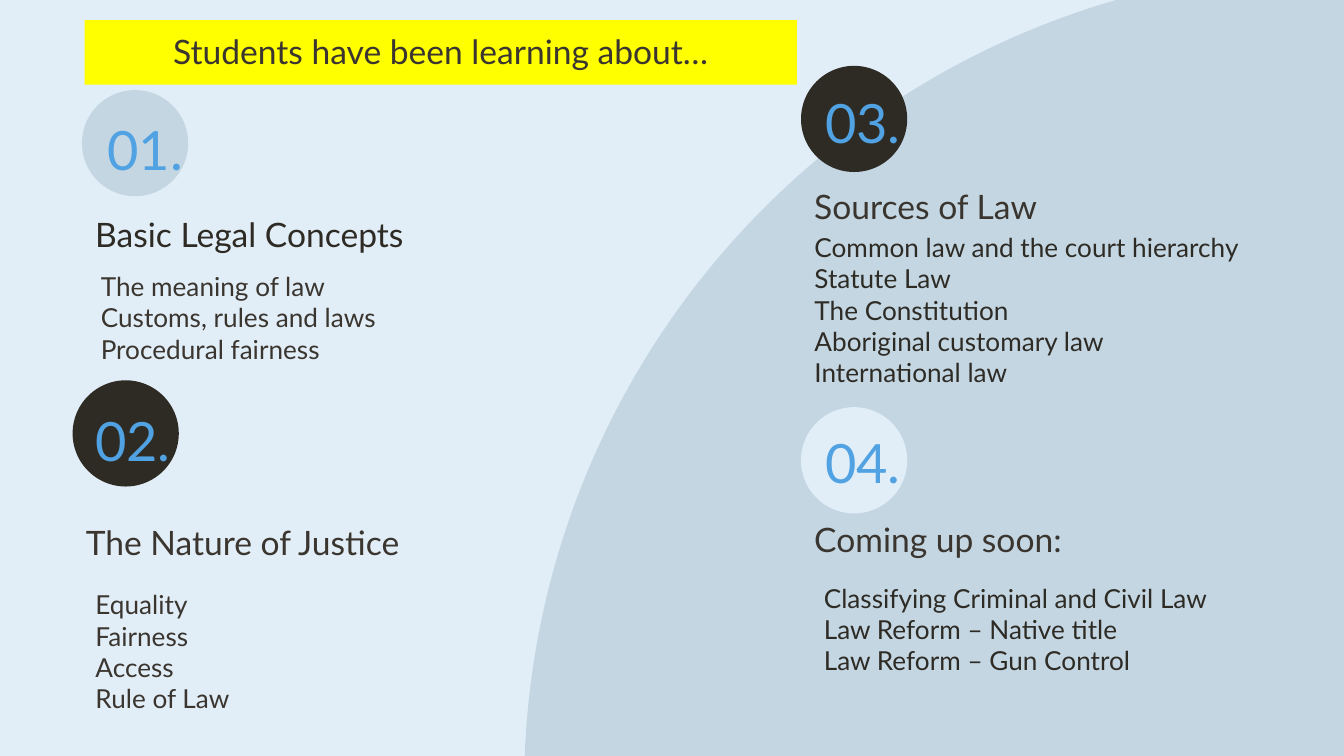
from dataclasses import dataclass

from lxml import etree
from pptx import Presentation
from pptx.dml.color import RGBColor
from pptx.enum.shapes import MSO_SHAPE
from pptx.enum.text import MSO_ANCHOR, MSO_AUTO_SIZE, PP_ALIGN
from pptx.oxml.ns import qn
from pptx.util import Inches, Pt

OVAL, PIE = MSO_SHAPE.OVAL, MSO_SHAPE.PIE
TOP, MIDDLE, BOTTOM = MSO_ANCHOR.TOP, MSO_ANCHOR.MIDDLE, MSO_ANCHOR.BOTTOM
LEFT, CENTER = PP_ALIGN.LEFT, PP_ALIGN.CENTER
NO_FIT = MSO_AUTO_SIZE.NONE

FONT = "Lato"
PALE, MIST, DARK = "E2EEF7", "C3D6E2", "2E2B25"
BROWN, BLUE, YELLOW = "3A352F", "51A2E2", "FFFF00"
COMPARISON_LAYOUT = 4
CIRCLE_SIZE = 0.79
COLUMN_WIDTH = 3.18


@dataclass
class Section:
    left: float
    top: float
    circle_color: str
    number: str
    number_offset: tuple
    heading: str
    heading_color: str
    heading_box: tuple
    items: list
    items_color: str
    items_box: tuple


SECTIONS = [
    Section(0.61, 0.67, MIST, "01.", (0.09, 0.12),
            "Basic Legal Concepts", DARK, (0.41, 0.91),
            ["The meaning of law", "Customs, rules and laws", "Procedural fairness"],
            BROWN, (0.04, 1.24, COLUMN_WIDTH, 0.82)),
    Section(0.54, 2.83, DARK, "02.", (0.07, 0.13),
            "The Nature of Justice", BROWN, (0.76, 0.69),
            ["Equality", "Fairness", "Access", "Rule of Law"],
            BROWN, (0.07, 1.45, COLUMN_WIDTH, 1.08)),
    Section(5.96, 0.49, DARK, "03.", (0.08, 0.1),
            "Sources of Law", BROWN, (0.38, 0.91),
            ["Common law and the court hierarchy", "Statute Law", "The Constitution",
             "Aboriginal customary law", "International law"],
            DARK, (0, 1.13, 3.86, 1.29)),
    Section(5.96, 3.03, PALE, "04.", (0.08, 0.09),
            "Coming up soon:", BROWN, (0.32, 0.91),
            ["Classifying Criminal and Civil Law", "Law Reform – Native title",
             "Law Reform – Gun Control"],
            DARK, (0.07, 1.2, 3.6, 1.01)),
]


def paint(fill, color):
    fill.solid()
    fill.fore_color.rgb = RGBColor.from_string(color)


def place(shape, left, top, width, height):
    shape.left, shape.top = Inches(left), Inches(top)
    shape.width, shape.height = Inches(width), Inches(height)


def add_plain_shape(slide, kind, box, color):
    shape = slide.shapes.add_shape(kind, *map(Inches, box))
    paint(shape.fill, color)
    shape.line.fill.background()
    shape.shadow.inherit = False
    return shape


def write(shape, text, size, color, anchor, alignment=LEFT):
    frame = shape.text_frame
    frame.text = text
    frame.word_wrap = True
    frame.auto_size = NO_FIT
    frame.vertical_anchor = anchor
    frame.margin_left = frame.margin_right = Inches(0.1)
    frame.margin_top = frame.margin_bottom = Inches(0.1)
    for paragraph in frame.paragraphs:
        paragraph.alignment = alignment
        paragraph.space_before = paragraph.space_after = Pt(0)
        paragraph.line_spacing = 1.0
        for run in paragraph.runs:
            run.font.name = FONT
            run.font.size = Pt(size)
            run.font.bold = False
            run.font.color.rgb = RGBColor.from_string(color)


def remove_bullets(shape):
    for paragraph in shape.text_frame.paragraphs:
        properties = paragraph._p.get_or_add_pPr()
        properties.set("marL", "0")
        properties.set("indent", "0")
        etree.SubElement(properties, qn("a:buNone"))


def add_text_box(slide, box, text, size, color, anchor):
    text_box = slide.shapes.add_textbox(*map(Inches, box))
    write(text_box, text, size, color, anchor)


def add_backdrop(slide, left, top, diameter):
    paint(slide.background.fill, PALE)
    quarter = add_plain_shape(slide, PIE, (left, top, diameter, diameter), MIST)
    quarter.adjustments[0] = 108
    quarter.adjustments[1] = 162
    quarter.element.getparent().insert(2, quarter.element)


def fill_banner(title, left, top, width, height):
    place(title, left, top, width, height)
    paint(title.fill, YELLOW)
    write(title, "Students have been learning about…", 18, BROWN, BOTTOM, CENTER)


def add_section(slide, body, section):
    left, top = section.left, section.top
    add_plain_shape(slide, OVAL, (left, top, CIRCLE_SIZE, CIRCLE_SIZE), section.circle_color)

    number_x, number_y = section.number_offset
    add_text_box(slide, (left + number_x, top + number_y, COLUMN_WIDTH, 0.63),
                 section.number, 29, BLUE, MIDDLE)

    heading_y, heading_height = section.heading_box
    add_text_box(slide, (left, top + heading_y, COLUMN_WIDTH, heading_height),
                 section.heading, 18, section.heading_color, BOTTOM)

    items_x, items_y, items_width, items_height = section.items_box
    place(body, left + items_x, top + items_y, items_width, items_height)
    write(body, "\n".join(section.items), 14, section.items_color, TOP)
    remove_bullets(body)


def main():
    presentation = Presentation()
    presentation.slide_width = Inches(10)
    presentation.slide_height = presentation.slide_width * 9 // 16
    slide = presentation.slides.add_slide(presentation.slide_layouts[COMPARISON_LAYOUT])
    title, *bodies = slide.placeholders

    add_backdrop(slide, 3.9, -0.24, 12.2)
    fill_banner(title, 0.63, 0.15, 5.3, 0.48)
    for body, section in zip(bodies, SECTIONS):
        add_section(slide, body, section)

    presentation.save("out.pptx")


if __name__ == "__main__":
    main()
